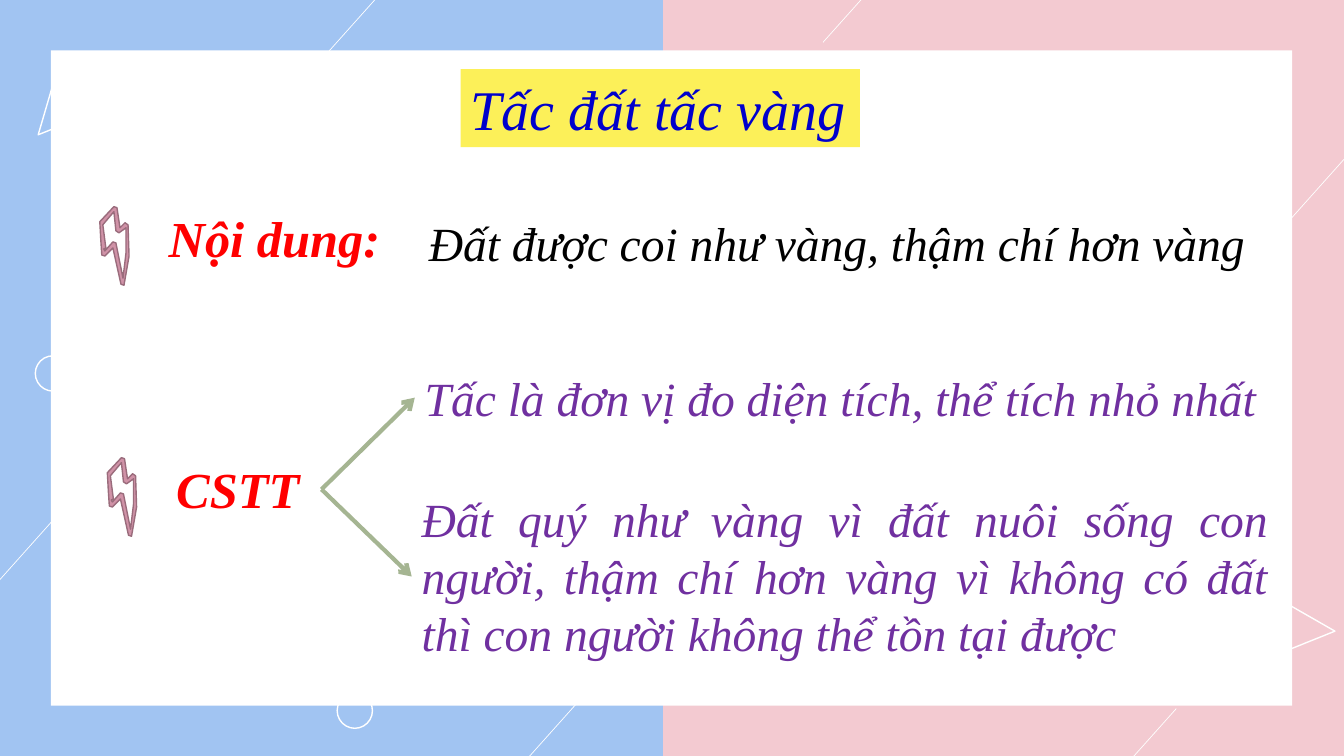
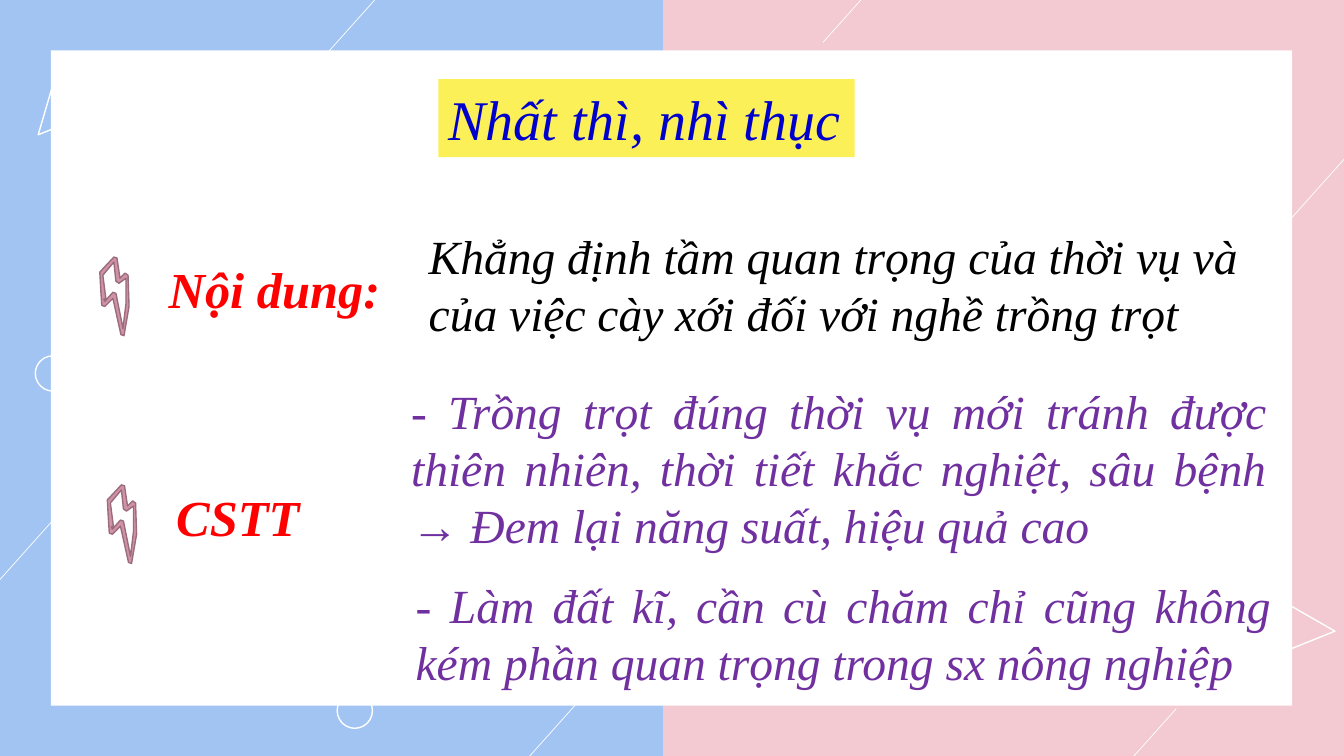
from dataclasses import dataclass
from typing import NamedTuple

from lxml.etree import SubElement as Sub
from pptx import Presentation as Deck
from pptx.dml.color import RGBColor as Rgb
from pptx.enum.shapes import MSO_CONNECTOR as Link, MSO_SHAPE as Kind
from pptx.enum.text import MSO_ANCHOR as Anchor, MSO_AUTO_SIZE as Auto, PP_ALIGN as Align
from pptx.oxml.ns import qn
from pptx.util import Inches, Pt

CELL = Inches(0.5)
COLS, ROWS = 80 / 3, 15
SPLIT = 13.16

BLUE, PINK, WHITE = "A1C4F2", "F3CAD1", "FFFFFF"
GOLD, NAVY, RED = "FCF059", "0000CC", "FF0000"
BLACK, PLUM, SAGE = "000000", "7030A0", "A5B592"
ROSE, MAUVE = "D092A7", "9A6C7C"

FACE = {"name": "Times New Roman", "italic": True}
HEAD = {**FACE, "size": Pt(40), "bold": False}
LABEL = {**FACE, "size": Pt(36), "bold": True}
BODY = {**FACE, "size": Pt(34), "bold": False}
FRAME = {"auto_size": Auto.NONE, "vertical_anchor": Anchor.TOP}


class Box(NamedTuple):
    col: float
    row: float
    wide: float
    high: float


@dataclass
class Note:
    text: str
    box: Box
    tint: str = PLUM
    align: Align = Align.JUSTIFY
    linked: bool = False


@dataclass
class Page:
    title: str
    head: Box
    first: float
    second: float
    notes: list[Note]


class Shape(NamedTuple):
    kind: Kind
    box: Box
    fill: str | None = None
    turn: float = 0


BACK = [
    Shape(Kind.RECTANGLE, Box(0, 0, SPLIT, ROWS), BLUE),
    Shape(Kind.RECTANGLE, Box(SPLIT, 0, COLS - SPLIT, ROWS), PINK),
    Shape(Kind.ISOSCELES_TRIANGLE, Box(0.48, 1.24, 1.8, 1.14), turn=338.1),
    Shape(Kind.ISOSCELES_TRIANGLE, Box(24.54, 11.76, 1.8, 1.14), turn=338.1),
    Shape(Kind.OVAL, Box(0.7, 7.06, 0.7, 0.7)),
    Shape(Kind.OVAL, Box(6.69, 13.75, 0.7, 0.7)),
]
RAYS = [(5.54, 2.12), (16.33, 0.84), (8.76, 16.96),
        (20.32, 17.44), (25.48, 4.49), (-1.86, 13.58)]
REACH, RISE = 3.02, 3.38
PANEL = Shape(Kind.RECTANGLE, Box(1.01, 1, 24.63, 13), WHITE)

BOLT = [
    [(27, 17), (22, 22), (19, 2), (16, 1), (2, 16), (3, 34), (4, 49),
     (7, 50), (15, 42), (23, 78), (26, 79), (31, 50), (30, 19), (27, 17)],
    [(28, 47), (25, 72), (18, 37), (15, 36), (7, 45), (6, 43), (8, 42),
     (5, 19), (16, 6), (18, 25), (21, 27), (28, 22), (28, 47)],
]

PAGES = [
    Page("Tấc đất tấc vàng", Box(9.14, 1.37, 7.92, 1.55), 4.02, 9, [
        Note("Đất được coi như vàng, thậm chí hơn vàng",
             Box(8.31, 4.14, 17.1, 1.34), BLACK, Align.LEFT),
        Note("Tấc là đơn vị đo diện tích, thể tích nhỏ nhất",
             Box(8.23, 7.22, 17.02, 1.34), linked=True),
        Note("Đất quý như vàng vì đất nuôi sống con người, thậm chí hơn vàng "
             "vì không có đất thì con người không thể tồn tại được",
             Box(8.17, 9.62, 17.2, 3.64), linked=True),
    ]),
    Page("Nhất thì, nhì thục", Box(8.7, 1.57, 8.26, 1.55), 5.02, 9.54, [
        Note("Khẳng định tầm quan trọng của thời vụ và của việc cày xới "
             "đối với nghề trồng trọt",
             Box(8.31, 4.41, 16.48, 2.5), BLACK, Align.LEFT),
        Note("- Trồng trọt đúng thời vụ mới tránh được thiên nhiên, thời tiết "
             "khắc nghiệt, sâu bệnh → Đem lại năng suất, hiệu quả cao",
             Box(7.96, 7.48, 17.38, 3.64)),
        Note("- Làm đất kĩ, cần cù chăm chỉ cũng không kém phần quan trọng "
             "trong sx nông nghiệp",
             Box(8.05, 11.33, 17.38, 2.5)),
    ]),
]


def tone(code: str) -> Rgb:
    return Rgb.from_string(code)


def span(*cells: float) -> list[int]:
    return [round(cell * CELL) for cell in cells]


def apply(item, values: dict) -> None:
    for name, value in values.items():
        setattr(item, name, value)


def paint(shape, fill: str | None, edge: str | None) -> None:
    shape.shadow.inherit = False
    if fill:
        shape.fill.solid()
        shape.fill.fore_color.rgb = tone(fill)
    else:
        shape.fill.background()
    if edge:
        shape.line.color.rgb = tone(edge)
        shape.line.width = Pt(1)
    else:
        shape.line.fill.background()


def write(shape, text: str, style: dict, tint: str, align: Align, wrap: bool = True) -> None:
    frame = shape.text_frame
    frame.text = text
    apply(frame, {**FRAME, "word_wrap": wrap})
    line = frame.paragraphs[0]
    line.alignment = align
    apply(line.runs[0].font, style)
    line.runs[0].font.color.rgb = tone(tint)


def add_text(slide, text: str, box: Box, style: dict, tint: str, align: Align):
    shape = slide.shapes.add_textbox(*span(*box))
    write(shape, text, style, tint, align)
    return shape


def add_line(slide, ends: tuple, tint: str, width: float):
    line = slide.shapes.add_connector(Link.STRAIGHT, *span(*ends))
    line.line.color.rgb = tone(tint)
    line.line.width = Pt(width)
    Sub(line.element.spPr, qn("a:effectLst"))
    return line


def add_arrow(slide, start, end) -> None:
    arrow = add_line(slide, (0, 0, 1, 1), SAGE, 3)
    arrow.begin_connect(start, 3)
    arrow.end_connect(end, 1)
    Sub(arrow.element.spPr.find(qn("a:ln")), qn("a:tailEnd"), type="arrow")


def add_shape(slide, item: Shape) -> None:
    shape = slide.shapes.add_shape(item.kind, *span(*item.box))
    shape.rotation = item.turn
    paint(shape, item.fill, None if item.fill else WHITE)


def add_bolt(slide, col: float, row: float) -> None:
    outer, inner = BOLT
    pen = slide.shapes.build_freeform(*outer[0], scale=Inches(0.01))
    pen.add_line_segments(outer[1:])
    pen.move_to(*inner[0])
    pen.add_line_segments(inner[1:])
    paint(pen.convert_to_shape(*span(col, row)), ROSE, MAUVE)


def add_label(slide, text: str, box: Box):
    add_bolt(slide, box.col - 1.21, box.row + 0.06)
    return add_text(slide, text, box, LABEL, RED, Align.JUSTIFY)


def set_back(slide, layout) -> None:
    for holder in list(layout.placeholders)[1:]:
        layout.shapes.element.remove(holder.element)
    for item in BACK:
        add_shape(slide, item)
    for col, row in RAYS:
        add_line(slide, (col, row, col + REACH, row - RISE), WHITE, 0.5)
    decor = [shape for shape in slide.shapes if not shape.is_placeholder]
    for place, shape in enumerate(decor, 2):
        layout.shapes.element.insert(place, shape.element)


def fill_page(slide, page: Page) -> None:
    add_shape(slide, PANEL)
    add_label(slide, "Nội dung:", Box(3.15, page.first, 5.12, 1.42))
    method = add_label(slide, "CSTT", Box(3.3, page.second, 3.08, 1.42))
    for note in page.notes:
        shape = add_text(slide, note.text, note.box, BODY, note.tint, note.align)
        if note.linked:
            add_arrow(slide, method, shape)
    title = slide.shapes.title
    apply(title, dict(zip(("left", "top", "width", "height"), span(*page.head))))
    title.fill.solid()
    title.fill.fore_color.rgb = tone(GOLD)
    write(title, page.title, HEAD, NAVY, Align.LEFT, wrap=False)
    slide.shapes.element.append(title.element)


def main() -> None:
    deck = Deck()
    deck.slide_width, deck.slide_height = span(COLS, ROWS)
    layout = deck.slide_layouts[5]
    slides = [deck.slides.add_slide(layout) for _ in PAGES]
    set_back(slides[0], layout)
    for slide, page in zip(slides, PAGES):
        fill_page(slide, page)
    deck.save("out.pptx")


if __name__ == "__main__":
    main()
